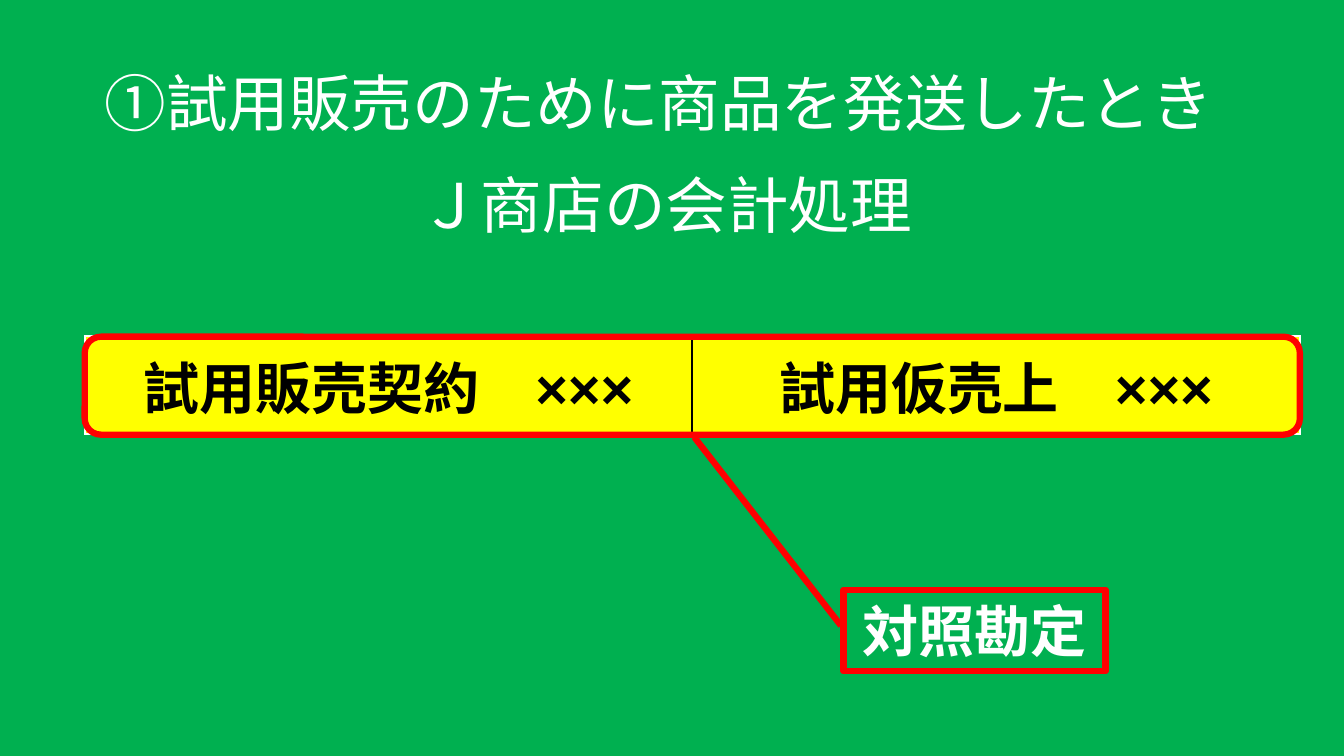
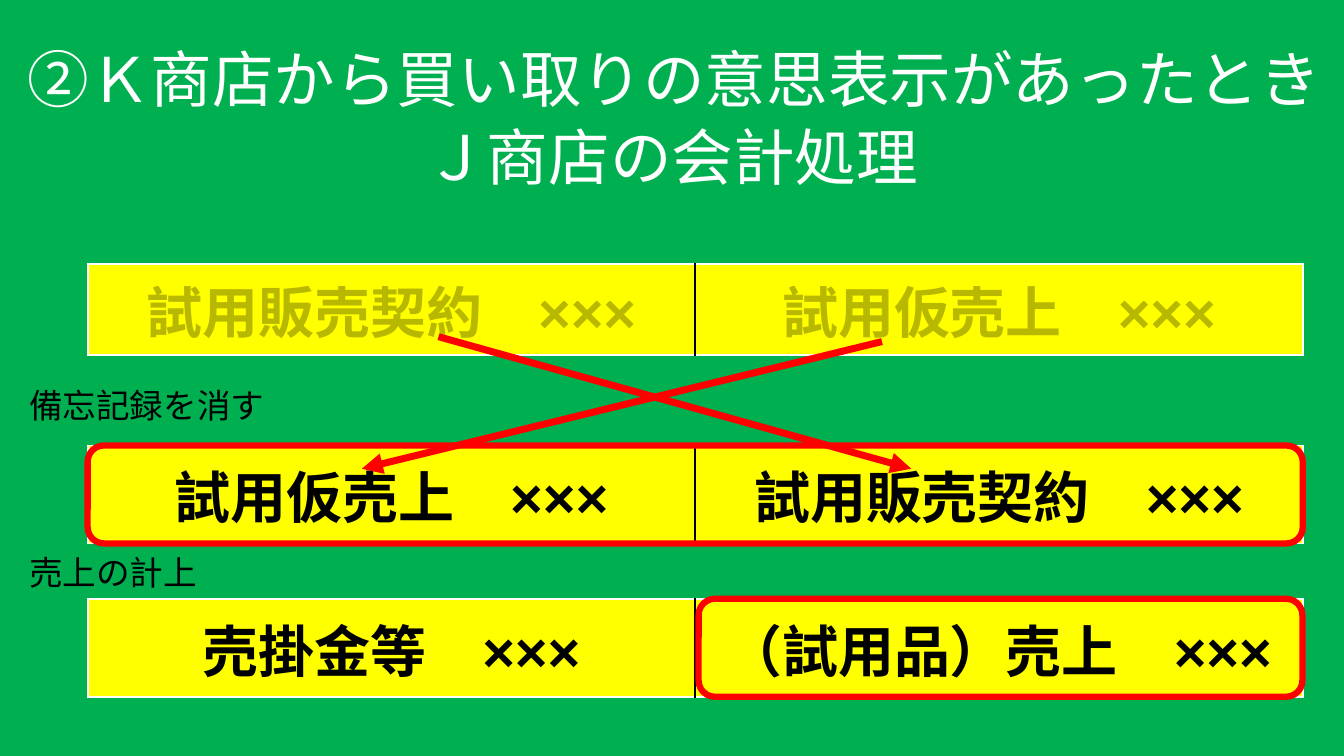
"""Two slides on the bookkeeping entries for sales on approval."""
from lxml import etree
from pptx import Presentation, util as u
from pptx.dml.color import RGBColor
from pptx.enum import shapes, text
from pptx.oxml.ns import qn

Pt = u.Pt
GREEN, YELLOW, RED, WHITE, BLACK = "00B050", "FFFF00", "FF0000", "FFFFFF", "000000"
JAPANESE, LATIN = "Noto Sans CJK JP", "Arial"
TITLE = "Ｊ商店の会計処理"
TITLE_SIZE = (404, 62)
ENTRY_WIDTH, ENTRY_HEIGHT = 868, 70
AMOUNT = "×××"

SLIDES = [
    {
        "title_at": (292.3, 118),
        "heading": ("①試用販売のために商品を発送したとき", (39, 28, 864, 90)),
        "entries": [(60.5, 240, ENTRY_HEIGHT, ("試用販売契約", "試用仮売上"), 100)],
        "frames": [(60.5, 240.5, ENTRY_WIDTH)],
        "callouts": [("対照勘定", (602.6, 421.2, 187.2, 58.3), (0.44, -0.01, -1.87, -0.57))],
        "labels": [],
        "arrows": [],
    },
    {
        "title_at": (296.6, 83.5),
        "heading": ("②Ｋ商店から買い取りの意思表示があったとき", (8.6, 10.8, 946.8, 90)),
        "entries": [
            (62.6, 188.6, 55.4, ("試用販売契約", "試用仮売上"), 28),
            (62.6, 318.2, ENTRY_HEIGHT, ("試用仮売上", "試用販売契約"), 100),
            (62.6, 427.7, ENTRY_HEIGHT, ("売掛金等", "（試用品）売上"), 100),
        ],
        "frames": [(62.6, 318.2, ENTRY_WIDTH), (499, 427.7, 431.3)],
        "callouts": [],
        "labels": [
            ("備忘記録を消す", (13.7, 271.4, 189.4, 36)),
            ("売上の計上", (13.7, 391, 141.8, 36)),
        ],
        "arrows": [((313.2, 240.5), (650.9, 334.8)), ((630, 244), (258.5, 334.8))],
    },
]


def color(value):
    return RGBColor.from_string(value)


def points(values):
    return [Pt(value) for value in values]


def write(frame, content, size=44, fill=WHITE, font=JAPANESE, bold=False, opacity=100,
          align=text.PP_ALIGN.CENTER, anchor=text.MSO_ANCHOR.MIDDLE, spacing=1.0):
    frame.word_wrap = True
    frame.vertical_anchor = anchor
    paragraph = frame.paragraphs[0]
    paragraph.alignment = align
    paragraph.line_spacing = spacing
    run = paragraph.add_run()
    run.text = content
    run.font.size = Pt(size)
    run.font.bold = bold
    run.font.name = font
    run.font.color.rgb = color(fill)
    properties = run.font._element
    if opacity < 100:
        tint = properties.find(".//" + qn("a:srgbClr"))
        etree.SubElement(tint, qn("a:alpha"), val=str(opacity * 1000))
    east_asian = etree.Element(qn("a:ea"), typeface=JAPANESE)
    properties.find(qn("a:latin")).addnext(east_asian)


def add_title(slide, position):
    title = slide.shapes.title
    title.left, title.top, title.width, title.height = points(position + TITLE_SIZE)
    title.text_frame.auto_size = text.MSO_AUTO_SIZE.NONE
    write(title.text_frame, TITLE, align=text.PP_ALIGN.LEFT, spacing=0.9)


def add_text(slide, content, box, **style):
    shape = slide.shapes.add_textbox(*points(box))
    write(shape.text_frame, content, **style)


def add_outline(slide, kind, box):
    shape = slide.shapes.add_shape(kind, *points(box))
    shape.shadow.inherit = False
    shape.fill.background()
    shape.line.color.rgb = color(RED)
    shape.line.width = Pt(4.5)
    return shape


def set_borders(cell, sides):
    properties = cell._tc.get_or_add_tcPr()
    for index, (side, value) in enumerate(sides.items()):
        line = etree.Element(qn("a:ln" + side), w=str(Pt(1.5)))
        fill = etree.SubElement(line, qn("a:solidFill"))
        etree.SubElement(fill, qn("a:srgbClr"), val=value)
        properties.insert(index, line)


def add_entry(slide, left, top, height, accounts, opacity):
    box = points((left, top, ENTRY_WIDTH, height))
    table = slide.shapes.add_table(1, len(accounts), *box).table
    table.first_row = table.horz_banding = False
    for column, account in enumerate(accounts):
        cell = table.cell(0, column)
        cell.fill.solid()
        cell.fill.fore_color.rgb = color(YELLOW)
        cell.vertical_anchor = text.MSO_ANCHOR.MIDDLE
        write(cell.text_frame, f"{account}　{AMOUNT}", size=40, fill=BLACK,
              font=LATIN, bold=True, opacity=opacity)
        inner = "R" if column == 0 else "L"
        set_borders(cell, {side: BLACK if side == inner else WHITE for side in "LRTB"})


def add_arrow(slide, start, end):
    arrow = slide.shapes.add_connector(shapes.MSO_CONNECTOR.STRAIGHT, *points(start + end))
    arrow.line.color.rgb = color(RED)
    arrow.line.width = Pt(5)
    etree.SubElement(arrow.line._get_or_add_ln(), qn("a:tailEnd"), type="triangle")
    etree.SubElement(arrow._element.spPr, qn("a:effectLst"))


def build(presentation, content):
    slide = presentation.slides.add_slide(presentation.slide_layouts[5])
    add_title(slide, content["title_at"])
    for caption, box, adjustments in content["callouts"]:
        callout = add_outline(slide, shapes.MSO_SHAPE.LINE_CALLOUT_1, box)
        for index, value in enumerate(adjustments):
            callout.adjustments[index] = value
        write(callout.text_frame, caption, size=40, bold=True)
    for entry in content["entries"]:
        add_entry(slide, *entry)
    for start, end in content["arrows"]:
        add_arrow(slide, start, end)
    for left, top, width in content["frames"]:
        add_outline(slide, shapes.MSO_SHAPE.ROUNDED_RECTANGLE, (left, top, width, ENTRY_HEIGHT))
    add_text(slide, *content["heading"], font=LATIN)
    for caption, box in content["labels"]:
        add_text(slide, caption, box, size=24, fill=BLACK,
                 align=text.PP_ALIGN.LEFT, anchor=text.MSO_ANCHOR.TOP)


def main():
    presentation = Presentation()
    presentation.slide_width, presentation.slide_height = Pt(960), Pt(540)
    background = presentation.slide_master.background.fill
    background.solid()
    background.fore_color.rgb = color(GREEN)
    for content in SLIDES:
        build(presentation, content)
    presentation.save("out.pptx")


if __name__ == "__main__":
    main()
